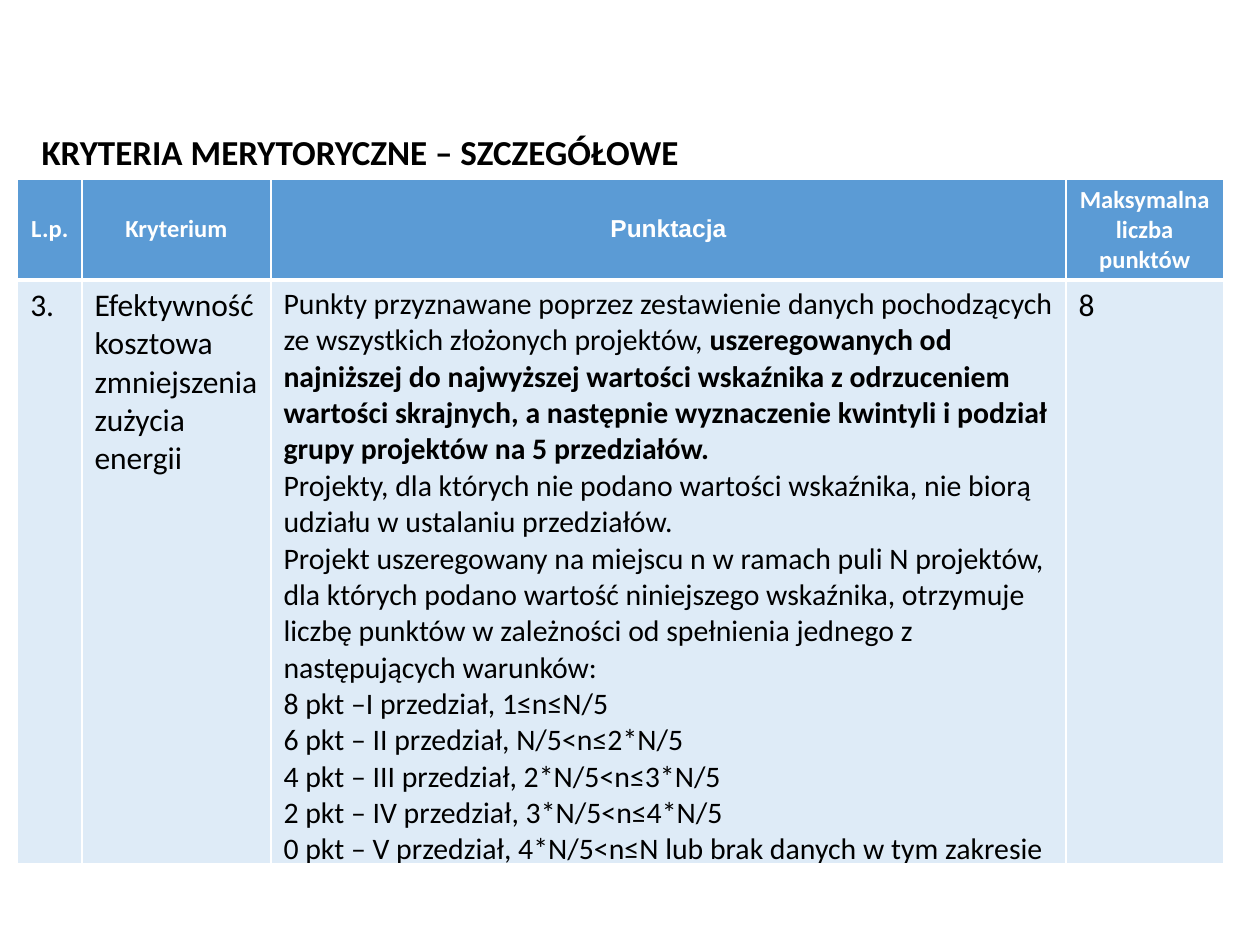
import pptx
import pptx.dml.color
import pptx.enum.text
import pptx.oxml
import pptx.oxml.ns
import pptx.util

Inches, Pt = pptx.util.Inches, pptx.util.Pt
ANCHOR, ALIGN = pptx.enum.text.MSO_ANCHOR, pptx.enum.text.PP_ALIGN

WHITE, BLACK, HEADER_BLUE, PALE_BLUE = "FFFFFF", "000000", "5B9BD5", "DEEBF7"
COLUMN_WIDTHS = [0.51, 1.5, 6.31, 1.25]
ROW_HEIGHTS = [0.8, 4.63]

TITLE = "KRYTERIA MERYTORYCZNE – SZCZEGÓŁOWE"
HEADERS = ["L.p.", "Kryterium", "Punktacja", "Maksymalna liczba punktów"]

# Each paragraph is a list of (text, bold) runs
SCORING = [
    [("Punkty przyznawane poprzez zestawienie danych pochodzących ze wszystkich "
      "złożonych projektów, ", False),
     ("uszeregowanych od najniższej do najwyższej wartości wskaźnika z odrzuceniem "
      "wartości skrajnych, a następnie wyznaczenie kwintyli i podział grupy projektów "
      "na 5 przedziałów.", True)],
    [("Projekty, dla których nie podano wartości wskaźnika, nie biorą udziału w "
      "ustalaniu przedziałów.", False)],
    [("Projekt uszeregowany na miejscu n w ramach puli N projektów, dla których podano "
      "wartość niniejszego wskaźnika, otrzymuje liczbę punktów w zależności od "
      "spełnienia jednego z następujących warunków:", False)],
    [("8 pkt –I przedział, 1≤n≤N/5", False)],
    [("6 pkt – II przedział, N/5<n≤2*N/5", False)],
    [("4 pkt – III przedział, 2*N/5<n≤3*N/5", False)],
    [("2 pkt – IV przedział, 3*N/5<n≤4*N/5", False)],
    [("0 pkt – V przedział, 4*N/5<n≤N lub brak danych w tym zakresie", False)],
]
CRITERION = [
    [[("3.", False)]],
    [[("Efektywność kosztowa zmniejszenia zużycia energii", False)]],
    SCORING,
    [[("8", False)]],
]


def color(value):
    return pptx.dml.color.RGBColor.from_string(value)


def set_font(paragraph, size, value, name="Calibri", bold=None):
    font = paragraph.font
    font.size, font.name, font.bold = Pt(size), name, bold
    font.color.rgb = color(value)


def set_borders(cell, **widths):
    """Draw white borders; widths in points by side: L, R, T, B."""
    properties = cell._tc.get_or_add_tcPr()
    for index, (side, width) in enumerate(widths.items()):
        properties.insert(index, pptx.oxml.parse_xml(
            f'<a:ln{side} {pptx.oxml.ns.nsdecls("a")} w="{Pt(width)}">'
            f'<a:solidFill><a:srgbClr val="{WHITE}"/></a:solidFill></a:ln{side}>'))


def fill_cell(cell, value):
    cell.fill.solid()
    cell.fill.fore_color.rgb = color(value)


def add_title(slide, left, top, width, height):
    title = slide.shapes.title
    title.left, title.top, title.width, title.height = map(
        Inches, (left, top, width, height))
    frame = title.text_frame
    frame.text = TITLE
    frame.word_wrap = False
    frame.auto_size = pptx.enum.text.MSO_AUTO_SIZE.SHAPE_TO_FIT_TEXT
    frame.vertical_anchor = ANCHOR.MIDDLE
    paragraph = frame.paragraphs[0]
    paragraph.alignment = ALIGN.LEFT
    set_font(paragraph, 20, BLACK, bold=True)


def add_criteria_table(slide, left, top):
    table = slide.shapes.add_table(
        len(ROW_HEIGHTS), len(COLUMN_WIDTHS), Inches(left), Inches(top),
        Inches(sum(COLUMN_WIDTHS)), Inches(sum(ROW_HEIGHTS))).table
    for column, width in zip(table.columns, COLUMN_WIDTHS):
        column.width = Inches(width)
    for row, height in zip(table.rows, ROW_HEIGHTS):
        row.height = Inches(height)

    # Header row
    for cell, text in zip(table.rows[0].cells, HEADERS):
        fill_cell(cell, HEADER_BLUE)
        set_borders(cell, L=1, R=1, T=1, B=3)
        cell.vertical_anchor = ANCHOR.MIDDLE
        cell.text = text
        paragraph = cell.text_frame.paragraphs[0]
        paragraph.alignment = ALIGN.CENTER
        set_font(paragraph, 14, WHITE,
                 "Arial" if text == "Punktacja" else "Calibri", True)

    # Criterion row
    for cell, paragraphs in zip(table.rows[1].cells, CRITERION):
        fill_cell(cell, PALE_BLUE)
        set_borders(cell, L=1, R=1, T=3, B=1)
        frame = cell.text_frame
        for index, runs in enumerate(paragraphs):
            paragraph = frame.add_paragraph() if index else frame.paragraphs[0]
            set_font(paragraph, 17 if paragraphs is SCORING else 18, BLACK)
            for text, bold in runs:
                run = paragraph.add_run()
                run.text, run.font.bold = text, bold


def main():
    presentation = pptx.Presentation()
    presentation.slide_width = Inches(10)
    presentation.slide_height = Inches(7.5)
    slide = presentation.slides.add_slide(
        presentation.slide_layouts.get_by_name("Title Only"))
    add_criteria_table(slide, 0.14, 1.42)
    add_title(slide, 0.23, 0.98, 5.42, 0.44)
    presentation.save("out.pptx")


if __name__ == "__main__":
    main()
